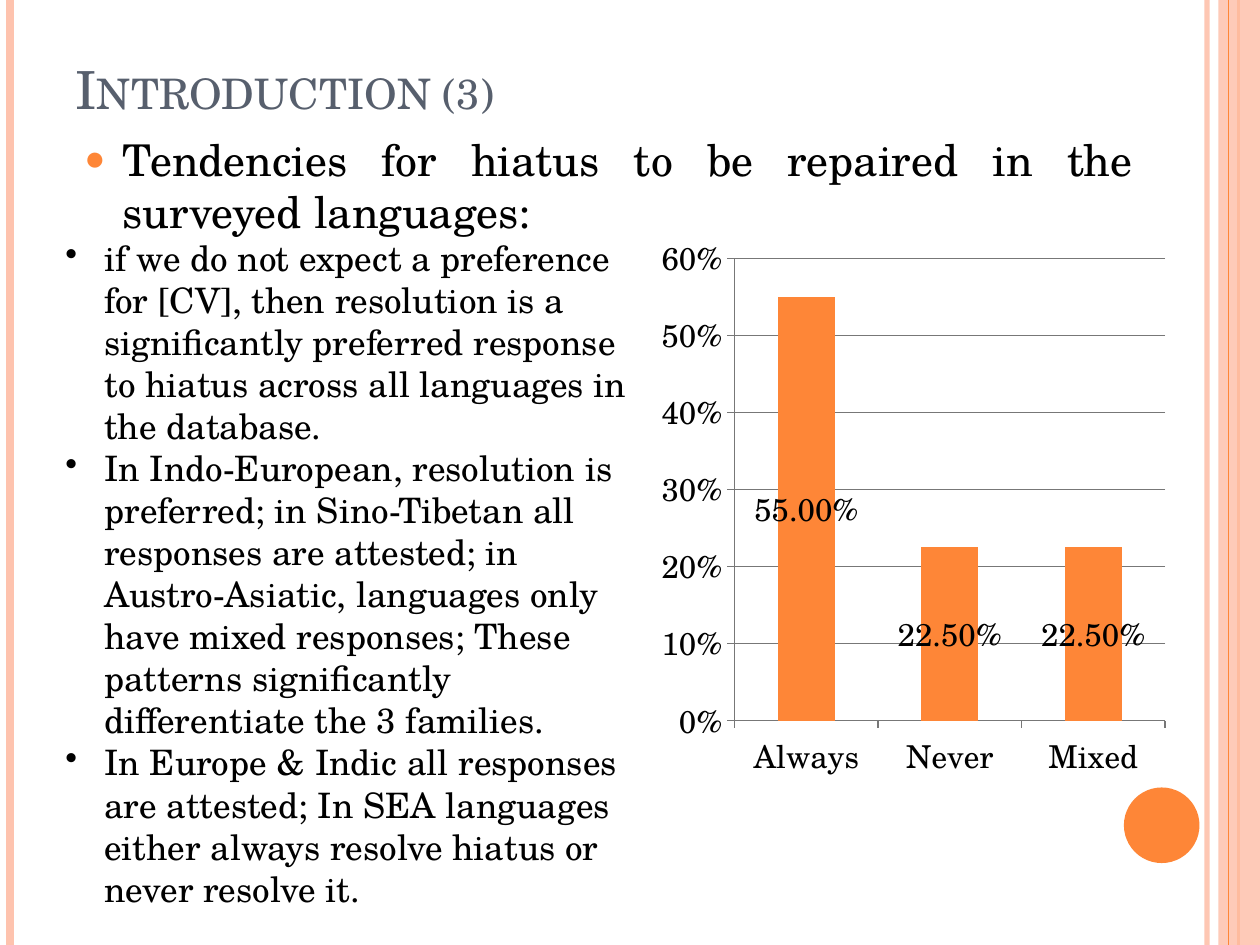
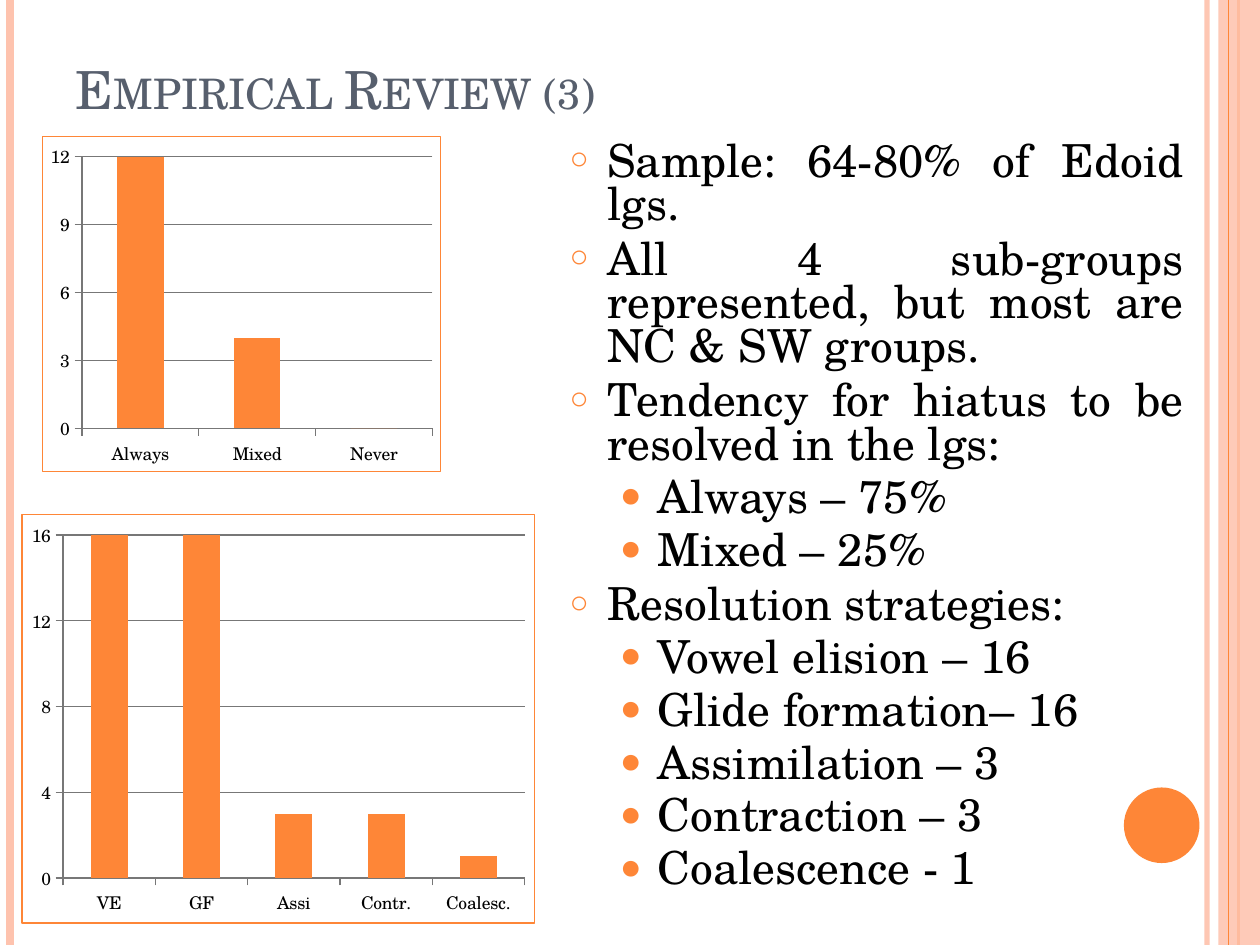
from lxml.etree import SubElement
from pptx import Presentation
from pptx.chart.data import CategoryChartData
from pptx.dml.color import RGBColor
from pptx.enum.chart import XL_CHART_TYPE as ChartType
from pptx.enum.chart import XL_LABEL_POSITION as LabelPosition
from pptx.enum.chart import XL_TICK_MARK as TickMark
from pptx.enum.shapes import MSO_CONNECTOR as Connector
from pptx.enum.shapes import MSO_SHAPE as Shape
from pptx.enum.text import MSO_ANCHOR as Anchor
from pptx.enum.text import MSO_AUTO_SIZE as AutoSize
from pptx.enum.text import PP_ALIGN as Align
from pptx.oxml import parse_xml
from pptx.oxml.ns import nsdecls, qn
from pptx.util import Inches, Pt

# Shared look
FONT = "TeX Gyre Schola"
ORANGE, PEACH, SLATE, BLACK, GREY = "FE8637", "FEC3AE", "575F6D", "000000", "777777"
WIDTH, HEIGHT = 10, 7.5

# Paragraph styles: paragraph format, indents in inches, bullet
TOPIC = {
    "format": {"level": 0, "alignment": Align.JUSTIFY, "space_before": Pt(6), "line_spacing": Pt(25)},
    "indent": (0.3, -0.3), "bullet": ("○", ORANGE, 70), "size": 26,
}
DETAIL = {
    "format": {"level": 1, "alignment": Align.JUSTIFY, "space_before": Pt(5.2), "line_spacing": Pt(25)},
    "indent": (0.7, -0.3), "bullet": ("●", ORANGE, 80), "size": 26,
}
LEAD = {
    "format": {"level": 1, "alignment": Align.JUSTIFY, "space_before": Pt(5)},
    "indent": (0.7, -0.3), "bullet": ("●", ORANGE, 80), "size": 25,
}
FINDING = {
    "format": {"alignment": Align.LEFT},
    "indent": (0.31, -0.31), "bullet": ("•", BLACK, 100), "size": 20,
}


def rgb(value):
    return RGBColor.from_string(value)


def apply(target, values):
    for name, value in values.items():
        setattr(target, name, value)


def place(item, box):
    apply(item, dict(zip(("left", "top", "width", "height"), map(Inches, box))))


def set_opacity(properties, percent):
    colour = properties.xpath(".//a:srgbClr")[0]
    SubElement(colour, qn("a:alpha")).set("val", str(percent * 1000))


# Side bands and corner disc, kept on the layout
def add_band_line(slide, x, colour, width):
    band = slide.shapes.add_connector(
        Connector.STRAIGHT, Inches(x), 0, Inches(x), Inches(HEIGHT))
    band.line.color.rgb = rgb(colour)
    band.line.width = Pt(width)
    SubElement(band._element.spPr, qn("a:effectLst"))
    return band


def add_solid(slide, kind, box, colour):
    solid = slide.shapes.add_shape(kind, *map(Inches, box))
    solid.shadow.inherit = False
    solid.fill.solid()
    solid.fill.fore_color.rgb = rgb(colour)
    solid.line.fill.background()
    return solid


def decorate_layout(layout, slide):
    inner_band = add_band_line(slide, 9.58, PEACH, 3)
    set_opacity(inner_band._element.spPr, 93)
    left_band = add_band_line(slide, 0.08, PEACH, 4.5)
    thick_rule = add_band_line(slide, 9.83, ORANGE, 1.5)
    edge_panel = add_solid(slide, Shape.RECTANGLE, (9.67, 0, 0.33, HEIGHT), PEACH)
    set_opacity(edge_panel._element.spPr, 87)
    thin_rule = add_band_line(slide, 9.75, ORANGE, 0.75)
    disc = add_solid(slide, Shape.OVAL, (8.92, 6.25, 0.6, 0.6), ORANGE)
    parts = (inner_band, left_band, thick_rule, edge_panel, thin_rule, disc)
    for number, part in enumerate(parts, start=101):
        part._element.xpath(".//p:cNvPr")[0].set("id", str(number))
        layout.shapes._spTree.append(part._element)


# Text
def write_title(slide, words):
    title = slide.shapes.title
    place(title, (0.5, 0.3, 8.17, 0.7))
    apply(title.text_frame, {"auto_size": AutoSize.NONE, "vertical_anchor": Anchor.BOTTOM})
    heading = title.text_frame.paragraphs[0]
    heading.alignment = Align.LEFT
    run = heading.add_run()
    run.text = words
    apply(run.font, {"name": FONT, "size": Pt(30)})
    run.font.color.rgb = rgb(SLATE)
    run.font._element.set("cap", "small")


def style_paragraph(paragraph, style):
    apply(paragraph, style["format"])
    properties = paragraph._p.get_or_add_pPr()
    for name, length in zip(("marL", "indent"), style["indent"]):
        properties.set(name, str(Inches(length)))
    mark, colour, percent = style["bullet"]
    SubElement(SubElement(properties, qn("a:buClr")), qn("a:srgbClr")).set("val", colour)
    SubElement(properties, qn("a:buSzPct")).set("val", str(percent * 1000))
    SubElement(properties, qn("a:buChar")).set("char", mark)


def write_list(holder, box, items):
    place(holder, box)
    frame = holder.text_frame
    apply(frame, {"word_wrap": True, "auto_size": AutoSize.NONE, "vertical_anchor": Anchor.TOP})
    for index, (style, words) in enumerate(items):
        paragraph = frame.add_paragraph() if index else frame.paragraphs[0]
        style_paragraph(paragraph, style)
        run = paragraph.add_run()
        run.text = words
        apply(run.font, {"name": FONT, "size": Pt(style["size"])})
        run.font.color.rgb = rgb(BLACK)


# Charts
def set_plot_area(chart, inner):
    plot_area = chart._chartSpace.xpath("c:chart/c:plotArea")[0]
    for old in plot_area.findall(qn("c:layout")):
        plot_area.remove(old)
    layout = parse_xml(f"<c:layout {nsdecls('c')}/>")
    manual = SubElement(layout, qn("c:manualLayout"))
    settings = [("layoutTarget", "inner"), ("xMode", "edge"), ("yMode", "edge")]
    for tag, value in settings + list(zip("xywh", inner)):
        SubElement(manual, qn(f"c:{tag}")).set("val", str(value))
    plot_area.insert(0, layout)


def set_border(chart, colour):
    chart._chartSpace.xpath("c:chart")[0].addnext(parse_xml(
        f'<c:spPr {nsdecls("c", "a")}><a:ln w="{Pt(0.75)}"><a:solidFill>'
        f'<a:srgbClr val="{colour}"/></a:solidFill></a:ln></c:spPr>'))


def add_bar_chart(slide, box, kind, bars, top, step, size, inner, number_format="General"):
    data = CategoryChartData(number_format=number_format)
    data.categories = list(bars)
    data.add_series("Series 1", list(bars.values()))
    chart = slide.shapes.add_chart(kind, *map(Inches, box), data).chart
    apply(chart, {"has_legend": False, "has_title": False})
    apply(chart.font, {"name": FONT, "size": Pt(size)})
    chart.font.color.rgb = rgb(BLACK)
    plot = chart.plots[0]
    apply(plot, {"gap_width": 150, "vary_by_categories": False})
    fill = plot.series[0].format.fill
    fill.solid()
    fill.fore_color.rgb = rgb(ORANGE)
    values = chart.value_axis
    apply(values, {"minimum_scale": 0, "maximum_scale": top, "major_unit": step,
                   "has_major_gridlines": True})
    for axis in (values, chart.category_axis):
        apply(axis, {"major_tick_mark": TickMark.OUTSIDE, "minor_tick_mark": TickMark.NONE})
    for ruled in (values, chart.category_axis, values.major_gridlines):
        ruled.format.line.color.rgb = rgb(GREY)
        ruled.format.line.width = Pt(0.75)
    set_plot_area(chart, inner)
    return chart


# Slide 1
def build_introduction(slide):
    write_title(slide, "Introduction (3)")
    write_list(slide.placeholders[1], (0.17, 1, 8.92, 6.17), [
        (LEAD, "Tendencies for hiatus to be repaired in the surveyed languages:")])
    tendencies = add_bar_chart(
        slide, (5.25, 1.83, 4.25, 4.42), ChartType.COLUMN_STACKED,
        {"Always": 0.55, "Never": 0.225, "Mixed": 0.225},
        top=0.6, step=0.1, size=18, inner=(0.13, 0.05, 0.81, 0.83), number_format="0.00%")
    apply(tendencies.value_axis.tick_labels,
          {"number_format": "0%", "number_format_is_linked": False})
    tendencies.plots[0].overlap = 100
    tendencies.plots[0].has_data_labels = True
    apply(tendencies.plots[0].data_labels, {
        "show_value": True, "number_format": "0.00%",
        "number_format_is_linked": False, "position": LabelPosition.CENTER})
    findings_box = (0.42, 1.83, 4.75, 5.49)
    findings = slide.shapes.add_textbox(*map(Inches, findings_box))
    write_list(findings, findings_box, [
        (FINDING, "if we do not expect a preference for [CV], then resolution is a "
                  "significantly preferred response to hiatus across all languages in "
                  "the database."),
        (FINDING, "In Indo-European, resolution is preferred; in Sino-Tibetan all "
                  "responses are attested; in Austro-Asiatic, languages only have mixed "
                  "responses; These patterns significantly differentiate the 3 families."),
        (FINDING, "In Europe & Indic all responses are attested; In SEA languages either "
                  "always resolve hiatus or never resolve it."),
    ])


# Slide 2
def build_empirical_review(slide):
    write_title(slide, "Empirical Review (3)")
    write_list(slide.placeholders[1], (4.42, 1.08, 5.08, 6.08), [
        (TOPIC, "Sample: 64-80% of Edoid lgs."),
        (TOPIC, "All 4 sub-groups represented, but most are NC & SW groups."),
        (TOPIC, "Tendency for hiatus to be resolved in the lgs:"),
        (DETAIL, "Always – 75%"),
        (DETAIL, "Mixed – 25%"),
        (TOPIC, "Resolution strategies:"),
        (DETAIL, "Vowel elision – 16"),
        (DETAIL, "Glide formation– 16"),
        (DETAIL, "Assimilation – 3"),
        (DETAIL, "Contraction – 3"),
        (DETAIL, "Coalescence - 1"),
    ])
    tendency = add_bar_chart(
        slide, (0.33, 1.08, 3.17, 2.67), ChartType.COLUMN_CLUSTERED,
        {"Always": 12, "Mixed": 4, "Never": 0},
        top=12, step=3, size=10, inner=(0.1, 0.06, 0.88, 0.81))
    strategies = add_bar_chart(
        slide, (0.17, 4.08, 4.08, 3.25), ChartType.COLUMN_CLUSTERED,
        {"VE": 16, "GF": 16, "Assi": 3, "Contr.": 3, "Coalesc.": 1},
        top=16, step=4, size=10, inner=(0.08, 0.05, 0.9, 0.84))
    for chart in (tendency, strategies):
        set_border(chart, ORANGE)


def main():
    deck = Presentation()
    apply(deck, {"slide_width": Inches(WIDTH), "slide_height": Inches(HEIGHT)})
    layout = deck.slide_layouts[1]
    introduction, review = (deck.slides.add_slide(layout) for _ in range(2))
    decorate_layout(layout, introduction)
    build_introduction(introduction)
    build_empirical_review(review)
    deck.save("out.pptx")


if __name__ == "__main__":
    main()
